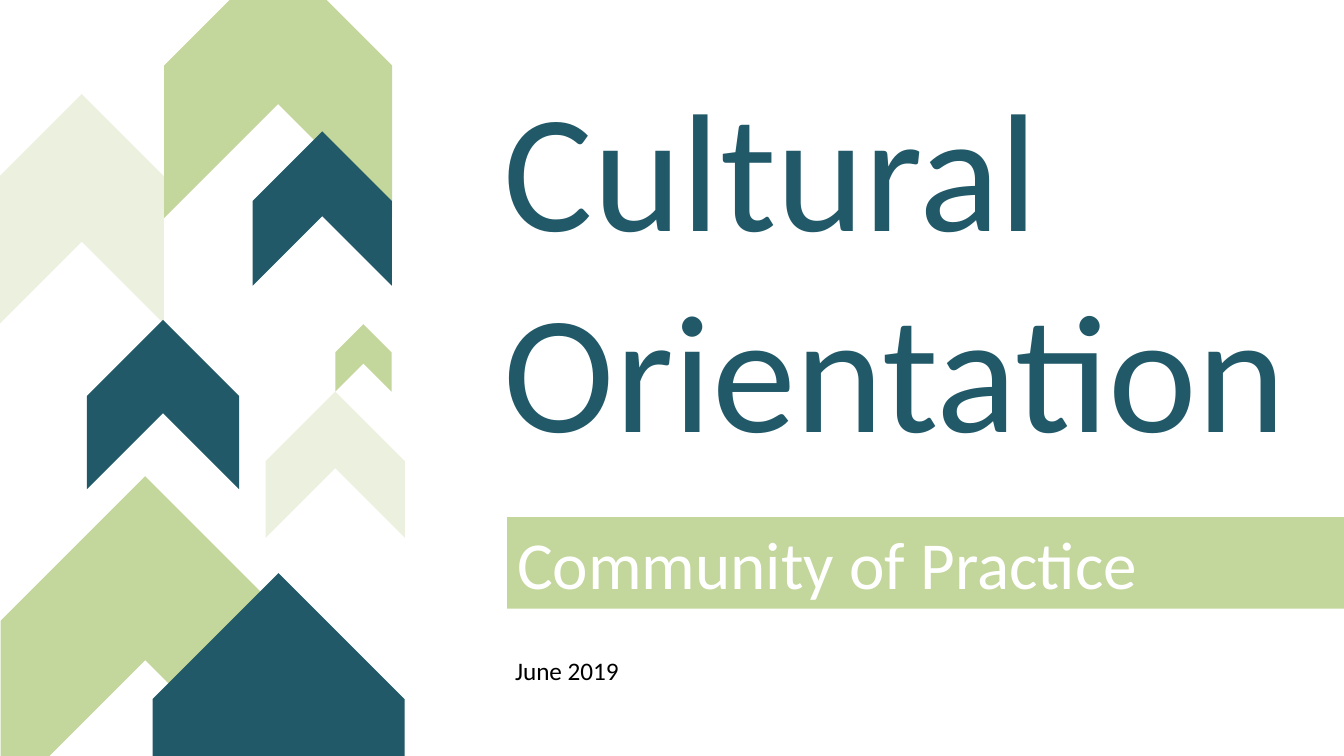
from pptx import Presentation
from pptx.dml.color import RGBColor
from pptx.enum.shapes import MSO_SHAPE
from pptx.enum.text import MSO_ANCHOR, MSO_AUTO_SIZE, PP_ALIGN
from pptx.util import Cm, Pt

CHEVRON, RECTANGLE = MSO_SHAPE.CHEVRON, MSO_SHAPE.RECTANGLE
TOP, MIDDLE = MSO_ANCHOR.TOP, MSO_ANCHOR.MIDDLE
LEFT = PP_ALIGN.LEFT
GROW = MSO_AUTO_SIZE.SHAPE_TO_FIT_TEXT

FONT = "Calibri"
COLORS = {
    "pale": "EBF1DE",
    "green": "C3D69B",
    "teal": "215968",
    "white": "FFFFFF",
    "black": "000000",
}

# Upward arrows, back to front: tip x, tip y, width, height (cm), color
ARROWS = [
    (2.06, 2.37, 4.14, 5.79, "pale"),
    (7.01, -1.22, 5.74, 6.71, "green"),
    (8.12, 3.31, 3.51, 3.89, "teal"),
    (4.11, 8.06, 3.84, 4.27, "teal"),
    (8.45, 9.87, 3.51, 3.68, "pale"),
    (9.16, 8.17, 1.42, 1.70, "green"),
    (3.66, 12.00, 7.29, 8.28, "green"),
    (7.02, 14.44, 6.35, 8.56, "teal"),
]

# Text, box (left, top, width, height in cm), points, text color, fill, anchor
TEXTS = [
    ("Cultural Orientation", (12.45, 1.47, 20.55, 10.52), 120, "teal", None, TOP),
    ("Community of Practice", (12.78, 13.03, 23.04, 2.31), 48, "white", "green", MIDDLE),
    ("June 2019", (12.73, 16.38, 5.56, 1.02), 18, "black", None, TOP),
]


def rgb(name):
    return RGBColor.from_string(COLORS[name])


def add_filled_shape(slide, kind, box, color):
    shape = slide.shapes.add_shape(kind, *map(Cm, box))
    shape.shadow.inherit = False
    shape.fill.solid()
    shape.fill.fore_color.rgb = rgb(color)
    shape.line.fill.background()
    return shape


def add_arrow(slide, tip_x, tip_y, width, height, color):
    """Turn a chevron to point up; its box is the upright one lying on its side."""
    box = (tip_x - height / 2, tip_y + (height - width) / 2, height, width)
    add_filled_shape(slide, CHEVRON, box, color).rotation = 270


def add_text(slide, text, box, size, color, fill, anchor):
    if fill:
        shape = add_filled_shape(slide, RECTANGLE, box, fill)
    else:
        shape = slide.shapes.add_textbox(*map(Cm, box))
    text_frame = shape.text_frame
    text_frame.text = text
    text_frame.word_wrap = True
    text_frame.auto_size = GROW
    text_frame.vertical_anchor = anchor
    paragraph = text_frame.paragraphs[0]
    paragraph.alignment = LEFT
    font = paragraph.runs[0].font
    font.name = FONT
    font.size = Pt(size)
    font.color.rgb = rgb(color)


def main():
    presentation = Presentation()
    presentation.slide_width = Cm(33.87)
    presentation.slide_height = Cm(19.05)
    slide = presentation.slides.add_slide(presentation.slide_layouts[6])
    for arrow in ARROWS:
        add_arrow(slide, *arrow)
    for entry in TEXTS:
        add_text(slide, *entry)
    presentation.save("out.pptx")


if __name__ == "__main__":
    main()
